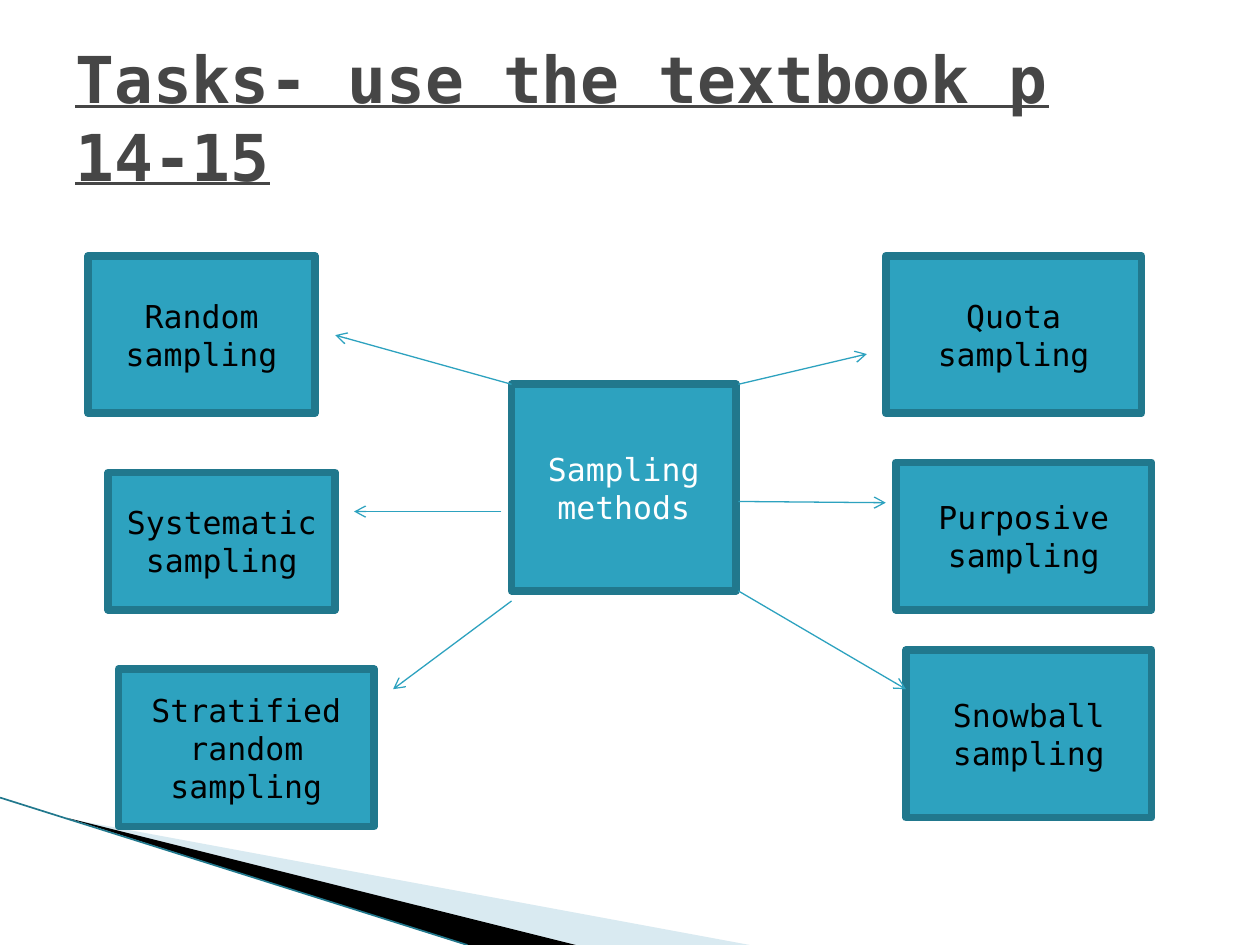
"""Build a slide that maps six sampling methods around a central box."""
import pptx
import pptx.dml.color
import pptx.enum.shapes
import pptx.enum.text
import pptx.oxml
import pptx.oxml.ns
import pptx.util
from pptx.util import Inches


def color(value):
    return pptx.dml.color.RGBColor.from_string(value)


def write(shape, text, size=18, fill="000000", bold=False, underline=False, align="CENTER"):
    frame = shape.text_frame
    frame.word_wrap = True
    frame.vertical_anchor = pptx.enum.text.MSO_ANCHOR.MIDDLE
    paragraph = frame.paragraphs[0]
    paragraph.alignment = pptx.enum.text.PP_ALIGN[align]
    run = paragraph.add_run()
    run.text = text
    run.font.name = "DejaVu Sans Mono"
    run.font.size = pptx.util.Pt(size)
    run.font.bold = bold
    run.font.underline = underline
    run.font.color.rgb = color(fill)


presentation = pptx.Presentation()
presentation.slide_width = Inches(10)
presentation.slide_height = Inches(7.5)
slide = presentation.slides.add_slide(presentation.slide_layouts[6])

wedges = [
    ("A0CBDC", 40, [(0.55, 6.5), (5.95, 7.5), (4.56, 7.5)]),
    ("000000", 100, [(0.53, 6.49), (4.57, 7.5), (3.7, 7.5)]),
]
for fill, opacity, points in wedges:
    corners = [(Inches(x), Inches(y)) for x, y in points]
    builder = slide.shapes.build_freeform(*corners[0], scale=1.0)
    builder.add_line_segments(corners[1:], close=True)
    wedge = builder.convert_to_shape()
    wedge.shadow.inherit = False
    wedge.fill.solid()
    wedge.fill.fore_color.rgb = color(fill)
    wedge.line.fill.background()
    if opacity < 100:
        tint = wedge.fill._xPr.find(".//" + pptx.oxml.ns.qn("a:srgbClr"))
        alpha = pptx.oxml.parse_xml(f'<a:alpha {pptx.oxml.ns.nsdecls("a")} val="{opacity * 1000}"/>')
        tint.append(alpha)

title = slide.shapes.add_textbox(Inches(0.5), Inches(0.3), Inches(9), Inches(1.25))
write(title, "Tasks- use the textbook p 14-15", size=36.9, fill="464646",
      bold=True, underline=True, align="LEFT")

boxes = [
    ("Sampling methods", "FFFFFF", 4.06, 3.05, 1.78, 1.64),
    ("Random sampling", "000000", 0.7, 2.03, 1.8, 1.25),
    ("Systematic sampling", "000000", 0.86, 3.75, 1.8, 1.09),
    ("Stratified random sampling", "000000", 0.94, 5.31, 2.03, 1.25),
    ("Quota sampling", "000000", 7.03, 2.03, 2.03, 1.25),
    ("Purposive sampling", "000000", 7.11, 3.67, 2.03, 1.17),
    ("Snowball sampling", "000000", 7.19, 5.16, 1.95, 1.33),
]
for text, text_color, left, top, width, height in boxes:
    box = slide.shapes.add_shape(
        pptx.enum.shapes.MSO_SHAPE.RECTANGLE,
        Inches(left), Inches(top), Inches(width), Inches(height))
    box.shadow.inherit = False
    box.fill.solid()
    box.fill.fore_color.rgb = color("2DA2BF")
    box.line.color.rgb = color("21788D")
    box.line.width = pptx.util.Pt(4.33)
    write(box, text, fill=text_color)

lines = [
    (0, 6.33, 3.71, 7.5, "21788D", 0.95, False),
    (5.86, 3.05, 6.88, 2.81, "2DA2BF", 0.75, True),
    (5.86, 3.98, 7.03, 3.99, "2DA2BF", 0.75, True),
    (5.86, 4.69, 7.19, 5.47, "2DA2BF", 0.75, True),
    (4.06, 3.05, 2.66, 2.66, "2DA2BF", 0.75, True),
    (3.98, 4.06, 2.81, 4.06, "2DA2BF", 0.75, True),
    (4.06, 4.77, 3.12, 5.47, "2DA2BF", 0.75, True),
]
for start_x, start_y, end_x, end_y, line_color, width, has_arrow in lines:
    connector = slide.shapes.add_connector(
        pptx.enum.shapes.MSO_CONNECTOR.STRAIGHT,
        Inches(start_x), Inches(start_y), Inches(end_x), Inches(end_y))
    connector.line.color.rgb = color(line_color)
    connector.line.width = pptx.util.Pt(width)
    properties = connector._element.spPr
    properties.append(pptx.oxml.parse_xml(f'<a:effectLst {pptx.oxml.ns.nsdecls("a")}/>'))
    if has_arrow:
        arrow = pptx.oxml.parse_xml(f'<a:tailEnd {pptx.oxml.ns.nsdecls("a")} type="arrow"/>')
        properties.find(pptx.oxml.ns.qn("a:ln")).append(arrow)

presentation.save("out.pptx")
